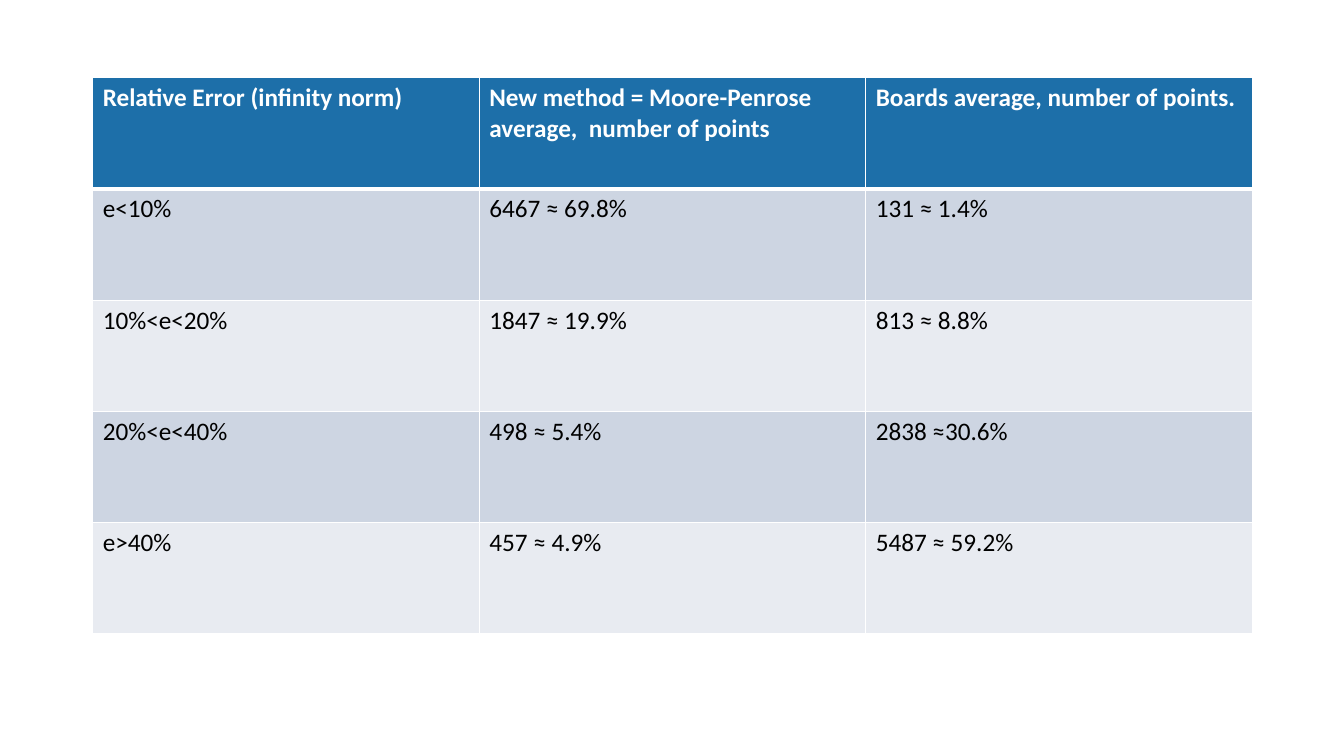
from lxml import etree
from pptx import Presentation
from pptx.dml.color import RGBColor
from pptx.oxml.ns import qn
from pptx.util import Inches, Pt

WHITE = RGBColor(0xFF, 0xFF, 0xFF)
BLACK = RGBColor(0x00, 0x00, 0x00)
HEADER_BLUE = RGBColor(0x1D, 0x6F, 0xA9)
BAND_DARK = RGBColor(0xCD, 0xD5, 0xE2)
BAND_LIGHT = RGBColor(0xE8, 0xEB, 0xF1)

ERROR_COUNTS = [
    ("Relative Error (infinity norm)",
     "New method = Moore-Penrose average,  number of points ",
     "Boards average, number of points."),
    ("e<10%", "6467 ≈ 69.8%", "131 ≈ 1.4%"),
    ("10%<e<20%", "1847 ≈ 19.9%", "813 ≈ 8.8%"),
    ("20%<e<40%", "498 ≈ 5.4%", "2838 ≈30.6%"),
    ("e>40%", "457 ≈ 4.9%", "5487 ≈ 59.2%"),
]
TABLE_WIDTH, TABLE_HEIGHT = 11.5, 5.52


def set_borders(cell, widths):
    """Draw white cell borders; widths maps each side (L, R, T, B) to points."""
    properties = cell._tc.get_or_add_tcPr()
    for position, (side, width) in enumerate(widths.items()):
        border = etree.Element(qn(f"a:ln{side}"), w=str(Pt(width)))
        fill = etree.SubElement(border, qn("a:solidFill"))
        etree.SubElement(fill, qn("a:srgbClr"), val=str(WHITE))
        properties.insert(position, border)


prs = Presentation()
prs.slide_width = Inches(13.33)
prs.slide_height = Inches(7.5)
slide = prs.slides.add_slide(prs.slide_layouts[6])

row_count, column_count = len(ERROR_COUNTS), len(ERROR_COUNTS[0])
error_table = slide.shapes.add_table(
    row_count, column_count, Inches(0.92), Inches(0.77),
    Inches(TABLE_WIDTH), Inches(TABLE_HEIGHT)).table
for column in error_table.columns:
    column.width = Inches(TABLE_WIDTH / column_count)
for row in error_table.rows:
    row.height = Inches(TABLE_HEIGHT / row_count)

for row_index, entries in enumerate(ERROR_COUNTS):
    is_header = row_index == 0
    if is_header:
        row_fill = HEADER_BLUE
    else:
        row_fill = BAND_DARK if row_index % 2 else BAND_LIGHT
    for column_index, entry in enumerate(entries):
        cell = error_table.cell(row_index, column_index)
        cell.text_frame.text = entry
        cell.fill.solid()
        cell.fill.fore_color.rgb = row_fill
        font = cell.text_frame.paragraphs[0].runs[0].font
        font.name = "Calibri"
        font.size = Pt(18)
        font.bold = is_header
        font.color.rgb = WHITE if is_header else BLACK
        set_borders(cell, {"L": 1, "R": 1,
                           "T": 3 if row_index == 1 else 1,
                           "B": 3 if is_header else 1})

prs.save("out.pptx")
